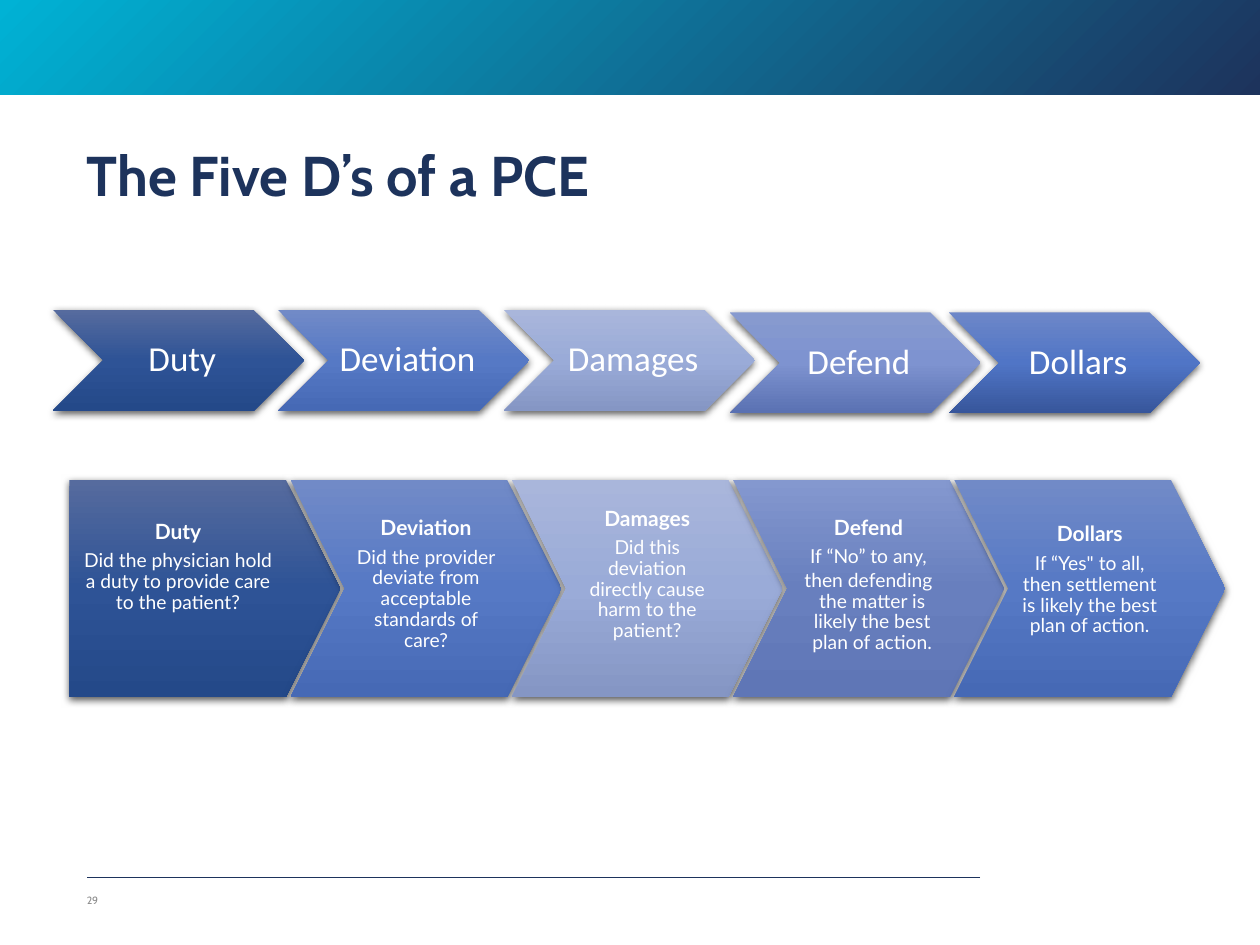
"""Build the slide on the five D's of a PCE."""
from lxml import etree
from pptx import Presentation
from pptx.dml.color import RGBColor as RGB
from pptx.enum.shapes import MSO_CONNECTOR as Link, MSO_SHAPE as Shape
from pptx.enum.text import MSO_ANCHOR as Anchor, PP_ALIGN as Align
from pptx.oxml import parse_xml
from pptx.oxml.ns import nsdecls, qn
from pptx.util import Cm, Pt


class Theme:
    navy, cyan, white, gray = "1D335C", "00B2D5", "FFFFFF", "8C8C8C"
    deep = ("566B9E", "2E5396", "244989")
    blue = ("718AC7", "5679C5", "4669B5")
    pale = ("A9B6DB", "9AABD8", "8596C4")
    lilac = ("879ACF", "7E93D0", "5A71B2")
    slate = ("8498CF", "687FBE", "5F76B6")
    royal = ("6D87C8", "5075C6", "37569B")
    brand_font, step_font, detail_font = "Cabin", "Calibri", "Lato"
    title, step, heading, body, number = Pt(32), Pt(20), Pt(12), Pt(11), Pt(6)


def add_gradient_shape(kind, left, top, width, height, colors, direction):
    shape = page.shapes.add_shape(kind, Cm(left), Cm(top), Cm(width), Cm(height))
    shape.shadow.inherit = False
    shape.line.fill.background()
    stops = "".join(
        f'<a:gs pos="{100000 * i // (len(colors) - 1)}"><a:srgbClr val="{color}"/></a:gs>'
        for i, color in enumerate(colors))
    shape._element.spPr.find(qn("a:prstGeom")).addnext(parse_xml(
        f'<a:gradFill {nsdecls("a")} rotWithShape="1"><a:gsLst>{stops}</a:gsLst>{direction}</a:gradFill>'))
    return shape


def add_arrow(kind, left, top, width, height, colors, anchor, insets):
    shape = add_gradient_shape(kind, left, top, width, height, colors, '<a:lin ang="5400000" scaled="0"/>')
    shape._element.spPr.find(qn("a:effectLst")).append(parse_xml(
        f'<a:outerShdw {nsdecls("a")} blurRad="57150" dist="19050" dir="5400000" algn="ctr" rotWithShape="0">'
        '<a:srgbClr val="000000"><a:alpha val="63000"/></a:srgbClr></a:outerShdw>'))
    frame = shape.text_frame
    frame.word_wrap = True
    frame.vertical_anchor = anchor
    frame.margin_left, frame.margin_top, frame.margin_right, frame.margin_bottom = map(Cm, insets)
    return shape


deck = Presentation()
deck.slide_width, deck.slide_height = Cm(25.4), Cm(19.05)
page = deck.slides.add_slide(deck.slide_layouts[5])

add_gradient_shape(Shape.RECTANGLE, 0, 0, 25.4, 1.91, (Theme.navy, Theme.cyan),
                   '<a:path path="circle"><a:fillToRect l="100000" t="100000"/></a:path>')

rule = page.shapes.add_connector(Link.STRAIGHT, Cm(19.76), Cm(17.69), Cm(1.75), Cm(17.69))
rule.line.color.rgb = RGB.from_string(Theme.navy)
rule.line.width = Pt(0.4)
etree.SubElement(rule._element.spPr, qn("a:effectLst"))

title = page.shapes.title
title.left, title.top, title.width, title.height = Cm(1.75), Cm(2.11), Cm(21.89), Cm(2.97)
number = page.shapes.add_textbox(Cm(1.75), Cm(17.65), Cm(0.97), Cm(1.02))
for box, text, size, color, bold in (
        (title, "The Five D’s of a PCE", Theme.title, Theme.navy, True),
        (number, "29", Theme.number, Theme.gray, False)):
    frame = box.text_frame
    frame.word_wrap = True
    frame.vertical_anchor = Anchor.MIDDLE
    frame.margin_left = frame.margin_top = frame.margin_right = frame.margin_bottom = 0
    para = frame.paragraphs[0]
    para.text = text
    para.alignment = Align.LEFT
    para.line_spacing = 0.9
    para.font.name, para.font.size, para.font.bold = Theme.brand_font, size, bold
    para.font.color.rgb = RGB.from_string(color)

steps = (
    ("Duty", 1.07, 6.25, Theme.deep),
    ("Deviation", 5.61, 6.25, Theme.blue),
    ("Damages", 10.16, 6.25, Theme.pale),
    ("Defend", 14.71, 6.3, Theme.lilac),
    ("Dollars", 19.13, 6.3, Theme.royal),
)
for name, left, top, colors in steps:
    arrow = add_arrow(Shape.CHEVRON, left, top, 5.06, 2.03, colors, Anchor.MIDDLE, (0.15, 0.08, 0, 0.08))
    para = arrow.text_frame.paragraphs[0]
    para.text = name
    para.alignment = Align.CENTER
    para.line_spacing = 0.9
    para.font.name, para.font.size = Theme.step_font, Theme.step
    para.font.color.rgb = RGB.from_string(Theme.white)

details = (
    ("Duty", ["Did the physician hold a duty to provide care to the patient?"], Theme.deep, 0.83),
    ("Deviation", ["Did the provider deviate from acceptable standards of care?"], Theme.blue, 0.75),
    ("Damages", ["Did this deviation directly cause harm to the patient?"], Theme.pale, 0.56),
    ("Defend", ["If “No” to any,", "then defending the matter is likely the best plan of action."],
     Theme.slate, 0.74),
    ("Dollars", ["If “Yes\" to all, then settlement is likely the best plan of action."], Theme.blue, 0.88),
)
for i, (heading, body, colors, inset_top) in enumerate(details):
    kind, inset_right = (Shape.CHEVRON, 0.18) if i else (Shape.PENTAGON, 0.71)
    arrow = add_arrow(kind, 1.4 + 4.46 * i, 9.68, 5.46, 4.37, colors, Anchor.TOP,
                      (0.18, inset_top, inset_right, 0.08))
    arrow.adjustments[0] = 0.25
    frame = arrow.text_frame
    for j, text in enumerate([heading, *body]):
        para = frame.add_paragraph() if j else frame.paragraphs[0]
        para.text = text
        para.alignment = Align.CENTER
        para.line_spacing = 0.9
        para.space_after = Pt(1.7) if j else Pt(4.2)
        if j and len(body) > 1:
            properties = para._p.get_or_add_pPr()
            properties.set("marL", str(Cm(0.15)))
            properties.set("indent", str(-Cm(0.15)))
        para.font.name, para.font.bold = Theme.detail_font, j == 0
        para.font.size = Theme.body if j else Theme.heading
        para.font.color.rgb = RGB.from_string(Theme.white)

deck.save("out.pptx")
